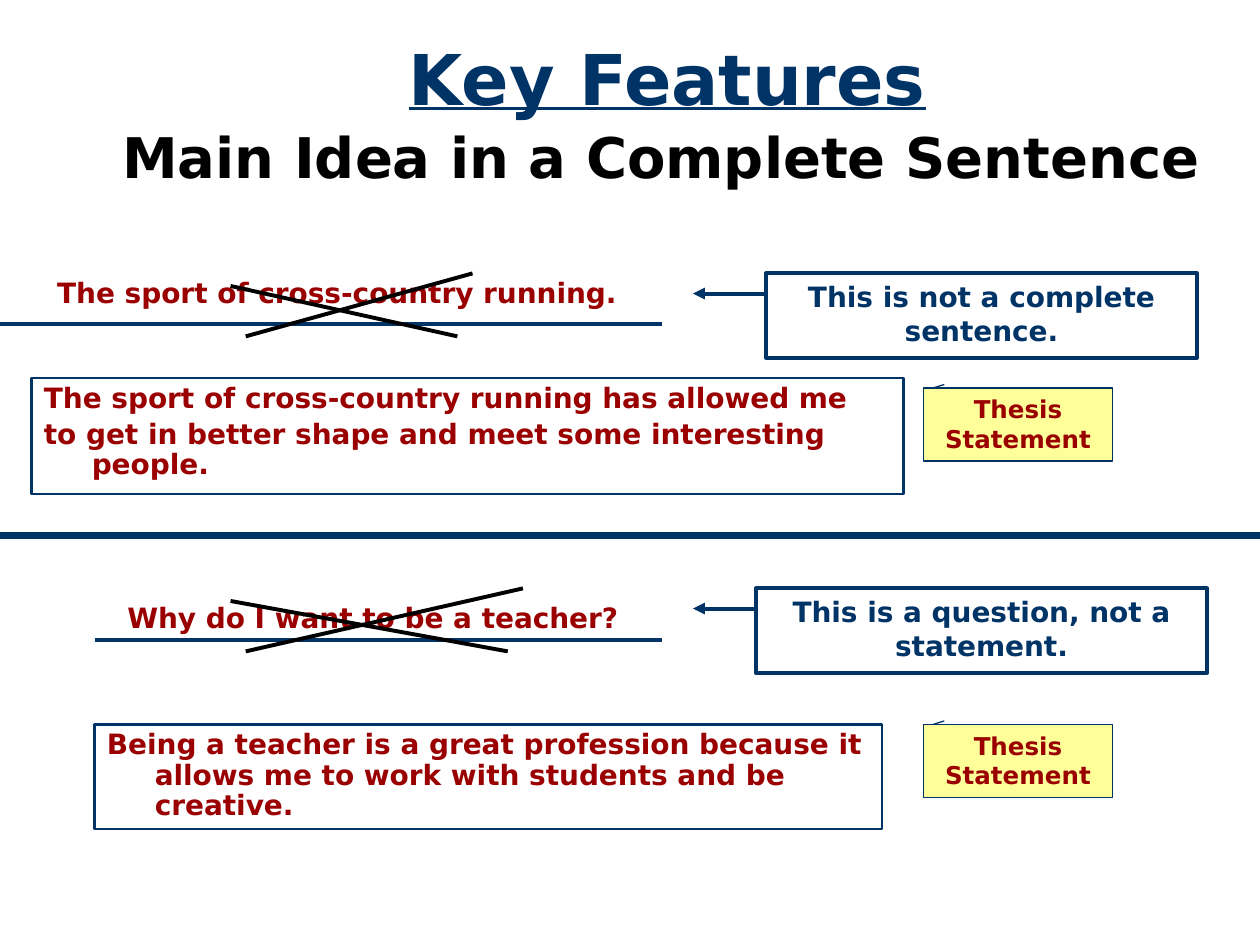
from pptx import Presentation
from pptx import util as u
from pptx.dml.color import RGBColor
from pptx.enum import shapes, text
from pptx.oxml.ns import qn
from lxml import etree

NAVY = RGBColor(0x00, 0x33, 0x66)
RED = RGBColor(0x9A, 0x00, 0x00)
BLACK = RGBColor(0x00, 0x00, 0x00)
WHITE = RGBColor(0xFF, 0xFF, 0xFF)
YELLOW = RGBColor(0xFF, 0xFF, 0x99)
FONT = "DejaVu Sans"
KIND = shapes.MSO_SHAPE
LEFT, MID = text.PP_ALIGN.LEFT, text.PP_ALIGN.CENTER
TOP, LOW = text.MSO_ANCHOR.TOP, text.MSO_ANCHOR.BOTTOM


def write(shape, lines, size, color, align=MID, hang=False, grow=False, anchor=TOP, under=False):
    """Fill a shape with bold paragraphs."""
    frame = shape.text_frame
    frame.word_wrap = True
    frame.vertical_anchor = anchor
    fit = text.MSO_AUTO_SIZE
    frame.auto_size = fit.SHAPE_TO_FIT_TEXT if grow else fit.NONE
    for i, line in enumerate(lines):
        para = frame.add_paragraph() if i else frame.paragraphs[0]
        para.alignment = align
        if hang:
            para.line_spacing = 0.9
            props = para._p.get_or_add_pPr()
            props.set("marL", str(u.Inches(0.38)))
            props.set("indent", str(u.Inches(-0.38)))
        if i:
            para.space_before = u.Pt(3.2)
        run = para.add_run()
        run.text = line
        font = run.font
        font.name, font.size, font.bold = FONT, u.Pt(size), True
        font.color.rgb = color
        if under:
            font.underline = True


def label(slide, at, line, size, color, **style):
    """Add a plain text box."""
    box = slide.shapes.add_textbox(*map(u.Inches, at))
    write(box, [line], size, color, **style)


def panel(slide, at, lines, size, color, width, fill=WHITE, kind=KIND.RECTANGLE, **style):
    """Add an outlined shape with text and return it."""
    box = slide.shapes.add_shape(kind, *map(u.Inches, at))
    box.shadow.inherit = False
    box.fill.solid()
    box.fill.fore_color.rgb = fill
    box.line.color.rgb = NAVY
    box.line.width = u.Pt(width)
    write(box, lines, size, color, **style)
    return box


def rule(slide, start, end, color=NAVY, width=2.25, arrow=False):
    """Draw a straight line, with an arrowhead at its end if asked."""
    line = slide.shapes.add_connector(
        shapes.MSO_CONNECTOR.STRAIGHT, *map(u.Inches, start + end))
    line.line.color.rgb = color
    line.line.width = u.Pt(width)
    if arrow:
        etree.SubElement(line.line._get_or_add_ln(), qn("a:tailEnd"), type="triangle")
    etree.SubElement(line._element.spPr, qn("a:effectLst"))


def cross(slide, top, width):
    """Strike out a sentence with two crossing lines."""
    rule(slide, (1.83, top + 0.1), (1.83 + width, top + 0.5), BLACK)
    rule(slide, (1.95 + width, top), (1.95, top + 0.5), BLACK)


def wrong(slide, at, line, under, top, width, note, reason):
    """Show a struck-out sentence and the reason it fails."""
    label(slide, at, line, 16, RED, hang=True)
    rule(slide, *under)
    cross(slide, top, width)
    panel(slide, note, [reason], 16, NAVY, 2.25, grow=True)
    level = note[1] + 0.16
    rule(slide, (note[0], level), (5.5, level), arrow=True)


def right(slide, at, lines, tag):
    """Show a good sentence and its thesis callout."""
    panel(slide, at, lines, 16, RED, 1.5, align=LEFT, hang=True)
    call = panel(slide, (7.33, tag, 1.5, 0.58), ["Thesis Statement"], 14, RED, 0.75,
                 fill=YELLOW, kind=KIND.LINE_CALLOUT_1)
    for i, value in enumerate((-0.05, 0.11, 0, 0.05)):
        call.adjustments[i] = value


def main():
    """Build the slide and save it."""
    deck = Presentation()
    deck.slide_width, deck.slide_height = u.Inches(10), u.Inches(7.5)
    slide = deck.slides.add_slide(deck.slide_layouts[6])
    label(slide, (0.67, 0.23, 9.25, 0.77), "Key Features", 40, NAVY,
          anchor=LOW, grow=True, under=True)
    label(slide, (0.75, 0.92, 9, 0.63), "Main Idea in a Complete Sentence", 32, BLACK, grow=True)
    wrong(slide, (0.1, 2.17, 5.15, 0.5), "The sport of cross-country running.",
          ((0, 2.57), (5.25, 2.57)), 2.17, 1.8,
          (6.08, 2.17, 3.42, 0.67), "This is not a complete sentence.")
    right(slide, (0.25, 3, 6.92, 0.92),
          ["The sport of cross-country running has allowed me",
           "to get in better shape and meet some interesting people."], 3.08)
    rule(slide, (0, 4.25), (10, 4.25), width=4.5)
    wrong(slide, (0.75, 4.75, 4.42, 0.42), "Why do I want to be a teacher?",
          ((0.75, 5.08), (5.25, 5.08)), 4.67, 2.2,
          (6, 4.67, 3.58, 0.67), "This is a question, not a statement.")
    right(slide, (0.75, 5.75, 6.25, 0.83),
          ["Being a teacher is a great profession because it "
           "allows me to work with students and be creative."], 5.75)
    deck.save("out.pptx")


if __name__ == "__main__":
    main()
